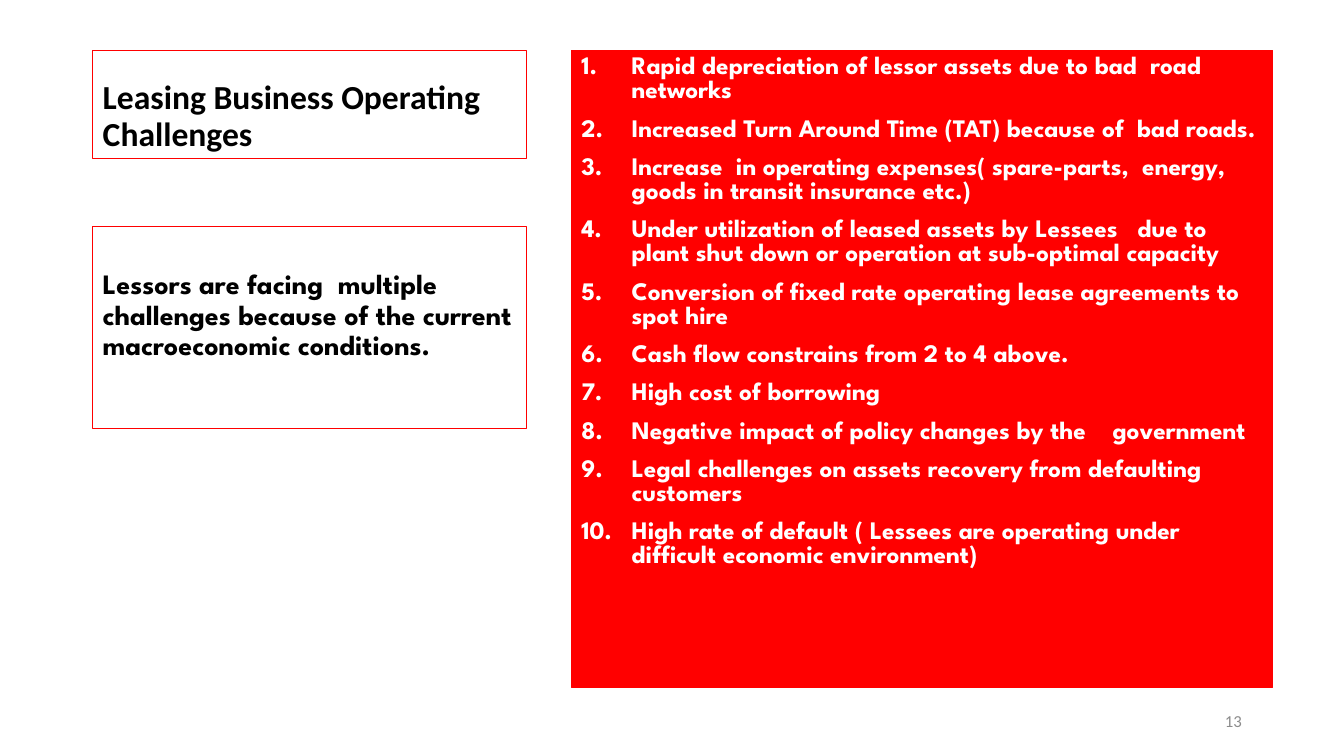
from lxml import etree
from pptx import Presentation, util as u
from pptx.dml.color import RGBColor
from pptx.enum import shapes, text
from pptx.oxml.ns import qn

HUES = {"red": "FF0000", "white": "FFFFFF", "black": "000000", "gray": "8C8C8C"}
SPARTAN = "League Spartan"
LEFT, TOP, WIDE = 2.34, 1.27, 10.92
ISSUES = [
    "Rapid depreciation of lessor assets due to bad  road networks",
    "Increased Turn Around Time (TAT) because of  bad roads.",
    "Increase  in operating expenses( spare-parts,  energy, goods in transit insurance etc.)",
    "Under utilization of leased assets by Lessees   due to plant shut down or operation at sub-optimal capacity",
    "Conversion of fixed rate operating lease agreements to spot hire",
    "Cash flow constrains from 2 to 4 above.",
    "High cost of borrowing",
    "Negative impact of policy changes by the    government",
    "Legal challenges on assets recovery from defaulting customers",
    "High rate of default ( Lessees are operating under difficult economic environment)",
]


def hue(name):
    """Return the named colour."""
    return RGBColor.from_string(HUES[name])


def frame(slide, box, fill=None):
    """Draw a red-edged rectangle in the box and return its text frame."""
    rect = slide.shapes.add_shape(shapes.MSO_SHAPE.RECTANGLE, *map(u.Cm, box))
    rect.shadow.inherit = False
    rect.line.color.rgb = hue("red")
    rect.line.width = u.Pt(0.75)
    if fill:
        rect.fill.solid()
        rect.fill.fore_color.rgb = hue(fill)
    else:
        rect.fill.background()
    return rect.text_frame


def write(body, lines, size, font=SPARTAN, color="black", bold=True, space=1.0,
          gap=0, align=text.PP_ALIGN.LEFT, anchor=text.MSO_ANCHOR.TOP):
    """Fill a text frame with one paragraph per line."""
    body.word_wrap = True
    body.vertical_anchor = anchor
    for spot, line in enumerate(lines):
        para = body.add_paragraph() if spot else body.paragraphs[0]
        para.alignment = align
        para.line_spacing = space
        para.space_before = u.Pt(gap)
        run = para.add_run()
        run.text = line
        run.font.name = font
        run.font.size = u.Pt(size)
        run.font.bold = bold
        run.font.color.rgb = hue(color)


def number(para, indent):
    """Number a paragraph with a hanging indent in centimetres."""
    props = para._p.get_or_add_pPr()
    props.set("marL", str(u.Cm(indent)))
    props.set("indent", str(-u.Cm(indent)))
    etree.SubElement(props, qn("a:buFont"), typeface="+mj-lt")
    etree.SubElement(props, qn("a:buAutoNum"), type="arabicPeriod")


def title(slide, box):
    """Place the slide title at the foot of its box."""
    write(frame(slide, box), ["Leasing Business Operating Challenges"], 24,
          font="Calibri", space=0.9, anchor=text.MSO_ANCHOR.BOTTOM)


def lead(slide, box):
    """Place the summary below a deep top margin."""
    body = frame(slide, box)
    body.margin_top = u.Cm(1.1)
    write(body, ["Lessors are facing  multiple challenges because of the "
                 "current macroeconomic conditions."], 20, space=0.9)


def panel(slide, box):
    """Place the numbered challenges on a red panel."""
    body = frame(slide, box, fill="red")
    write(body, ISSUES, 18, color="white", space=0.8, gap=10)
    for para in body.paragraphs:
        number(para, 1.27)


def folio(slide, box):
    """Place the page number."""
    label = slide.shapes.add_textbox(*map(u.Cm, box))
    write(label.text_frame, ["13"], 12, font="Calibri", color="gray", bold=False,
          align=text.PP_ALIGN.RIGHT, anchor=text.MSO_ANCHOR.MIDDLE)


def main():
    """Build and save the slide."""
    deck = Presentation()
    deck.slide_width, deck.slide_height = u.Cm(33.87), u.Cm(19.05)
    slide = deck.slides.add_slide(deck.slide_layouts[6])
    title(slide, (LEFT, TOP, WIDE, 2.72))
    panel(slide, (14.4, TOP, 17.68, 16.05))
    lead(slide, (LEFT, 5.72, WIDE, 5.08))
    folio(slide, (23.93, 17.65, 7.62, 1.02))
    deck.save("out.pptx")


if __name__ == "__main__":
    main()
